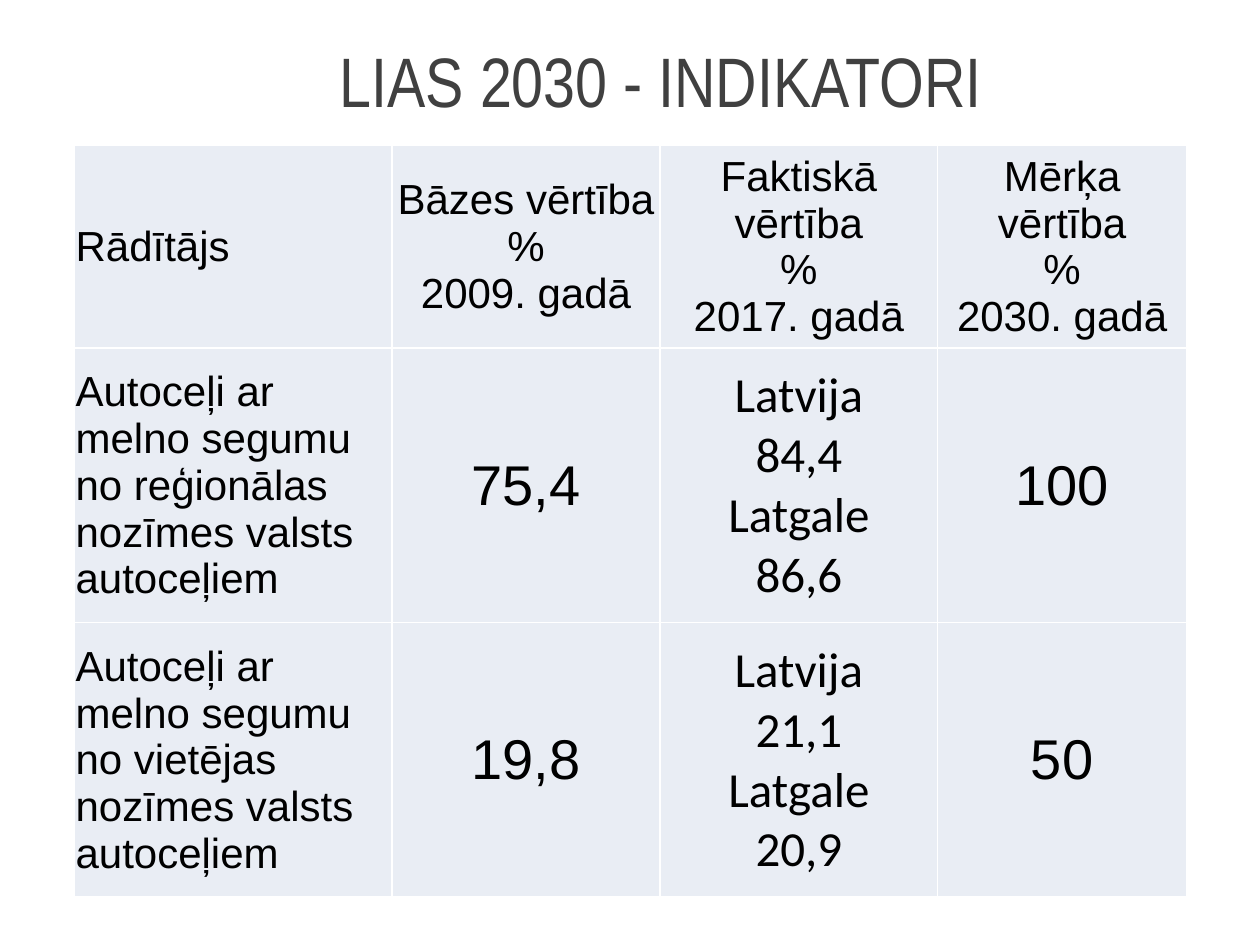
import pptx
import pptx.util
import pptx.dml.color
import pptx.enum.text
import pptx.oxml
import pptx.oxml.ns

Inches, Pt = pptx.util.Inches, pptx.util.Pt
RGBColor = pptx.dml.color.RGBColor
PP_ALIGN = pptx.enum.text.PP_ALIGN
MSO_ANCHOR = pptx.enum.text.MSO_ANCHOR

# Content: one list per table row
TITLE = "LIAS 2030 - INDIKATORI"
ROWS = [
    ["Rādītājs", "Bāzes vērtība\n%\n2009. gadā",
     "Faktiskā vērtība\n%\n2017. gadā", "Mērķa vērtība\n%\n2030. gadā"],
    ["Autoceļi ar melno segumu no reģionālas nozīmes valsts autoceļiem",
     "75,4", "Latvija\n84,4\nLatgale\n86,6", "100"],
    ["Autoceļi ar melno segumu no vietējas nozīmes valsts autoceļiem",
     "19,8", "Latvija\n21,1\nLatgale\n20,9", "50"],
]
COL_WIDTHS = [2.52, 2.13, 2.2, 1.98]
ROW_HEIGHTS = [1.47, 2.18, 2.18]

# Font and size: header row, then each column of the body
HEADER_FONT = ("Arial", 24)
BODY_FONTS = [("Arial", 24), ("Arial", 32), ("Calibri", 28), ("Arial", 32)]

BLACK = RGBColor(0x00, 0x00, 0x00)
TITLE_GREY = RGBColor(0x40, 0x40, 0x40)
CELL_BLUE = RGBColor(0xE9, 0xED, 0xF4)
BORDER_WHITE = RGBColor(0xFF, 0xFF, 0xFF)


def write(tf, text, font, color, align):
    tf.text = text
    tf.word_wrap = True
    for p in tf.paragraphs:
        p.alignment = align
        for r in p.runs:
            r.font.name, r.font.size = font[0], Pt(font[1])
            r.font.color.rgb = color


def add_borders(cell):
    tc_pr = cell._tc.get_or_add_tcPr()
    for i, side in enumerate("LRTB"):
        tc_pr.insert(i, pptx.oxml.parse_xml(
            f'<a:ln{side} {pptx.oxml.ns.nsdecls("a")} w="{Pt(1)}"><a:solidFill>'
            f'<a:srgbClr val="{BORDER_WHITE}"/></a:solidFill></a:ln{side}>'))


prs = pptx.Presentation()
prs.slide_width, prs.slide_height = Inches(10), Inches(7.5)
s = prs.slides.add_slide(prs.slide_layouts[6])

# Title
tf = s.shapes.add_textbox(Inches(0.83), Inches(0.3), Inches(8.83), Inches(1.25)).text_frame
tf.margin_top = 0
tf.vertical_anchor = MSO_ANCHOR.TOP
write(tf, TITLE, ("Arial Narrow", 40), TITLE_GREY, PP_ALIGN.CENTER)

# Indicator table
table = s.shapes.add_table(
    len(ROWS), len(COL_WIDTHS), Inches(0.59), Inches(1.15),
    Inches(sum(COL_WIDTHS)), Inches(sum(ROW_HEIGHTS))).table
table.first_row = table.horz_banding = False
for column, width in zip(table.columns, COL_WIDTHS):
    column.width = Inches(width)
for row, height in zip(table.rows, ROW_HEIGHTS):
    row.height = Inches(height)

for i, texts in enumerate(ROWS):
    for j, text in enumerate(texts):
        cell = table.cell(i, j)
        cell.fill.solid()
        cell.fill.fore_color.rgb = CELL_BLUE
        cell.vertical_anchor = MSO_ANCHOR.MIDDLE
        cell.margin_left = cell.margin_right = cell.margin_top = Inches(0.01)
        cell.margin_bottom = 0
        write(cell.text_frame, text, BODY_FONTS[j] if i else HEADER_FONT, BLACK,
              PP_ALIGN.CENTER if j else PP_ALIGN.LEFT)
        add_borders(cell)

prs.save("out.pptx")
